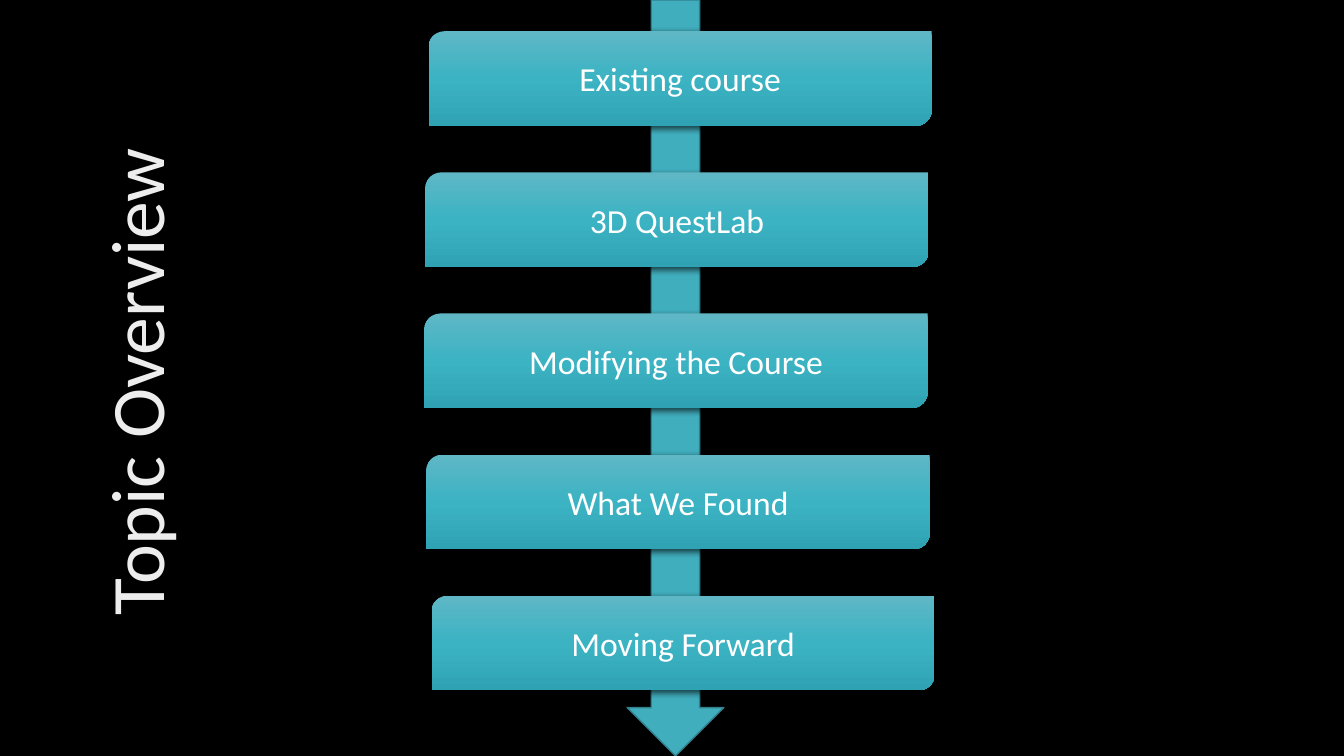
from copy import deepcopy
from dataclasses import dataclass

from lxml import etree
from pptx import Presentation, util as u
from pptx.dml.color import RGBColor
from pptx.enum import shapes, text
from pptx.oxml.ns import qn


@dataclass(frozen=True)
class Theme:
    font: str = "Calibri"
    title_size: int = 54
    topic_size: int = 24
    background: str = "000000"
    title: str = "EDEDED"
    topic: str = "FFFFFF"
    arrow: str = "41AEBD"
    arrow_line: str = "30818C"
    card: tuple = ((0, "5FB7C5"), (0.5, "3BB3C3"), (1, "2FA3B3"))
    shadow: str = "000000"


THEME = Theme()
WIDTH, HEIGHT = 13.33, 7.5
# Each topic has its own small sideways shift from the column's left edge.
TOPICS = (
    ("Existing course", 0.04),
    ("3D QuestLab", 0.01),
    ("Modifying the Course", 0),
    ("What We Found", 0.02),
    ("Moving Forward", 0.07),
)


def inches(*lengths):
    return [u.Inches(length) for length in lengths]


def color(value):
    return RGBColor.from_string(value)


def write_centred(shape, words, size, value, line_spacing=None):
    frame = shape.text_frame
    frame.word_wrap = True
    frame.vertical_anchor = text.MSO_ANCHOR.MIDDLE
    paragraph = frame.paragraphs[0]
    paragraph.alignment = text.PP_ALIGN.CENTER
    if line_spacing:
        paragraph.line_spacing = line_spacing
    run = paragraph.add_run()
    run.text = words
    run.font.name = THEME.font
    run.font.size = u.Pt(size)
    run.font.color.rgb = color(value)


def fill_gradient(shape, stops):
    """Fill from top to bottom with three colour stops."""
    shape.fill.gradient()
    shape.fill.gradient_angle = 270
    stop_list = shape._element.spPr.find(".//" + qn("a:gsLst"))
    stop_list.append(deepcopy(stop_list[0]))
    for stop, (position, value) in zip(shape.fill.gradient_stops, stops):
        stop.position = position
        stop.color.rgb = color(value)


def cast_shadow(shape):
    shape.shadow.inherit = False
    effects = shape._element.spPr.find(qn("a:effectLst"))
    shadow = etree.SubElement(
        effects, qn("a:outerShdw"), blurRad=str(u.Pt(4.5)), dist=str(u.Pt(1.5)),
        dir="5400000", algn="ctr", rotWithShape="0")
    shade = etree.SubElement(shadow, qn("a:srgbClr"), val=THEME.shadow)
    etree.SubElement(shade, qn("a:alpha"), val="63000")


def add_side_title(slide, words, left, top, width, height):
    """Place a title that reads upwards inside the given tall box."""
    turned_left = left + (width - height) / 2
    turned_top = top + (height - width) / 2
    box = slide.shapes.add_textbox(*inches(turned_left, turned_top, height, width))
    box.rotation = 270
    write_centred(box, words, THEME.title_size, THEME.title, line_spacing=0.9)


def add_flow_arrow(slide, left, top, width, height):
    arrow = slide.shapes.add_shape(
        shapes.MSO_SHAPE.DOWN_ARROW, *inches(left, top, width, height))
    arrow.shadow.inherit = False
    arrow.fill.solid()
    arrow.fill.fore_color.rgb = color(THEME.arrow)
    arrow.line.color.rgb = color(THEME.arrow_line)
    arrow.line.width = u.Pt(1)


def add_topic_cards(slide, topics, left, top, width, height):
    """Share the box's height between cards, each two thirds of its row."""
    row = height / len(topics)
    for index, (words, shift) in enumerate(topics):
        card = slide.shapes.add_shape(
            shapes.MSO_SHAPE.ROUND_2_DIAG_RECTANGLE,
            *inches(left + shift, top + index * row, width, row * 0.67))
        fill_gradient(card, THEME.card)
        card.line.fill.background()
        cast_shadow(card)
        write_centred(card, words, THEME.topic_size, THEME.topic)


def add_overview_slide(presentation):
    slide = presentation.slides.add_slide(presentation.slide_layouts[6])
    slide.background.fill.solid()
    slide.background.fill.fore_color.rgb = color(THEME.background)
    add_flow_arrow(slide, 6.22, 0, 0.96, HEIGHT)
    add_side_title(slide, "Topic Overview", 0.66, 0.25, 1.45, 7.07)
    add_topic_cards(slide, TOPICS, 4.21, 0.31, 4.99, 7)


def main():
    presentation = Presentation()
    presentation.slide_width, presentation.slide_height = inches(WIDTH, HEIGHT)
    add_overview_slide(presentation)
    presentation.save("out.pptx")


if __name__ == "__main__":
    main()
